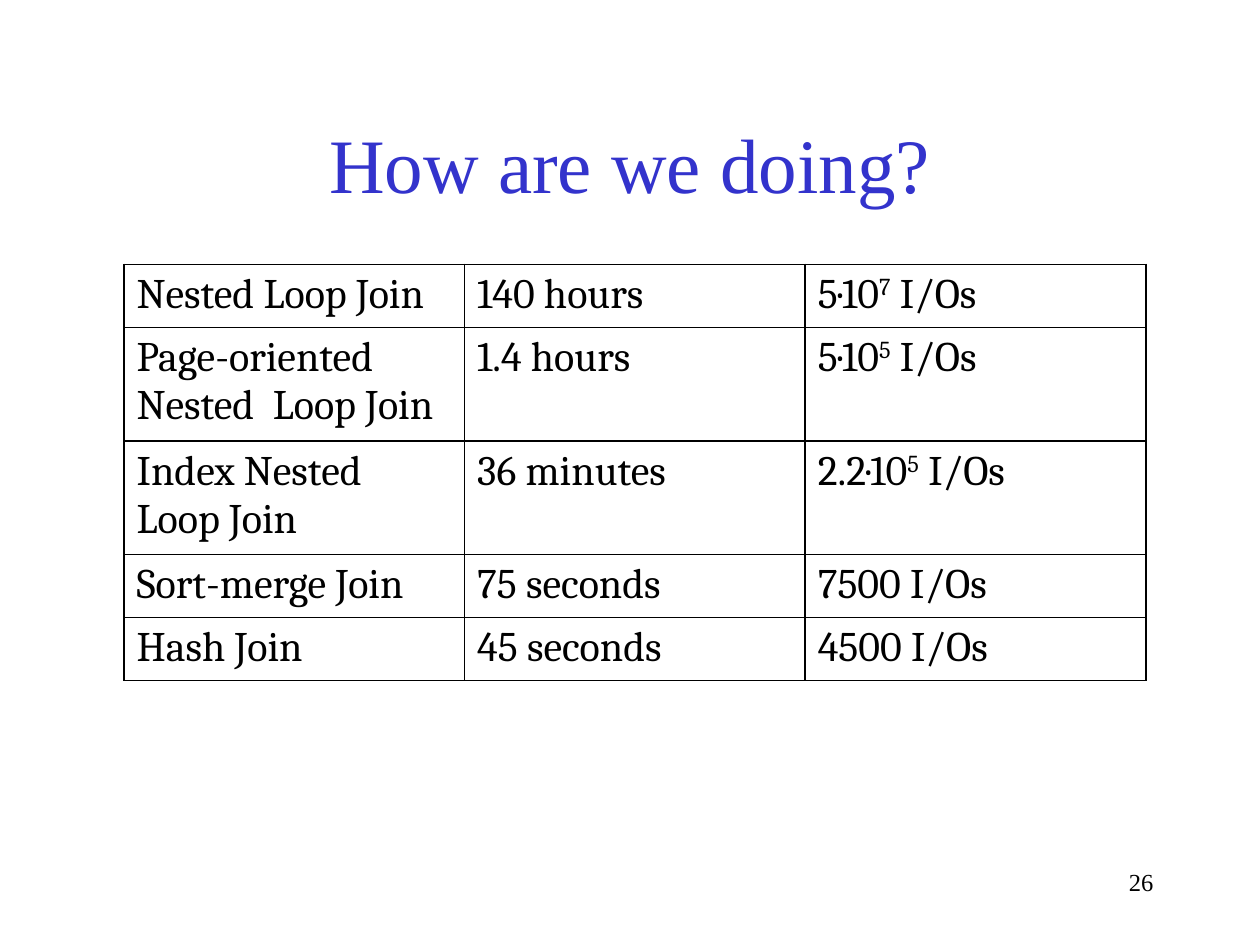
import pptx
import pptx.dml.color
import pptx.enum.text
import pptx.oxml
import pptx.oxml.ns
import pptx.util
from pptx.util import Cm

ALIGN = pptx.enum.text.PP_ALIGN
ANCHOR = pptx.enum.text.MSO_ANCHOR

JOIN_COSTS = [
    ("Nested Loop Join", "140 hours", "5·10^7^ I/Os"),
    ("Page-oriented Nested  Loop Join", "1.4 hours", "5·10^5^ I/Os"),
    ("Index Nested Loop Join", "36 minutes", "2.2·10^5^ I/Os"),
    ("Sort-merge Join", "75 seconds", "7500 I/Os"),
    ("Hash Join", "45 seconds", "4500 I/Os"),
]
ROW_HEIGHTS = [1.23, 2.2, 2.2, 1.23, 1.23]


def color(hex_string):
    return pptx.dml.color.RGBColor.from_string(hex_string)


def write_text(text_frame, text, font="Times New Roman", size=24, ink="000000", align=ALIGN.LEFT):
    paragraph = text_frame.paragraphs[0]
    paragraph.alignment = align
    for index, part in enumerate(text.split("^")):
        run = paragraph.add_run()
        run.text = part
        run.font.name = font
        run.font.size = pptx.util.Pt(size)
        run.font.color.rgb = color(ink)
        if index % 2:
            run.font._element.set("baseline", "30000")


class SlideBuilder:
    """Holds the style and the current slide, and adds elements to it."""

    title_ink = "3333CC"
    border_ink = "000000"
    cell_fill = "FFFFFF"
    table_font = "Cambria"

    def __init__(self, slide):
        self.slide = slide

    def text(self, text, left, top, width, height, anchor=ANCHOR.TOP, **text_format):
        shape = self.slide.shapes.add_textbox(Cm(left), Cm(top), Cm(width), Cm(height))
        shape.text_frame.word_wrap = True
        shape.text_frame.vertical_anchor = anchor
        write_text(shape.text_frame, text, **text_format)

    def border(self, cell):
        properties = cell._tc.get_or_add_tcPr()
        for side in ("lnL", "lnR", "lnT", "lnB"):
            properties.append(pptx.oxml.parse_xml(
                f'<a:{side} {pptx.oxml.ns.nsdecls("a")} w="12700"><a:solidFill>'
                f'<a:srgbClr val="{self.border_ink}"/></a:solidFill></a:{side}>'))

    def table(self, rows, left, top, width, row_heights):
        shape = self.slide.shapes.add_table(
            len(rows), len(rows[0]), Cm(left), Cm(top), Cm(width), Cm(sum(row_heights)))
        table = shape.table
        table.first_row = table.horz_banding = False
        for table_row, height, texts in zip(table.rows, row_heights, rows):
            table_row.height = Cm(height)
            for cell, text in zip(table_row.cells, texts):
                self.border(cell)
                cell.fill.solid()
                cell.fill.fore_color.rgb = color(self.cell_fill)
                write_text(cell.text_frame, text, font=self.table_font)


def main():
    presentation = pptx.Presentation()
    presentation.slide_width, presentation.slide_height = Cm(25.4), Cm(19.05)
    slide = presentation.slides.add_slide(presentation.slide_layouts[6])
    builder = SlideBuilder(slide)
    builder.text("How are we doing?", 1.9, 1.7, 21.6, 3.18, anchor=ANCHOR.MIDDLE,
                 size=44, ink=builder.title_ink, align=ALIGN.CENTER)
    builder.table(JOIN_COSTS, 2.5, 5.33, 20.6, ROW_HEIGHTS)
    builder.text("26", 18.2, 17.35, 5.3, 1.27, size=14, align=ALIGN.RIGHT)
    presentation.save("out.pptx")


if __name__ == "__main__":
    main()
